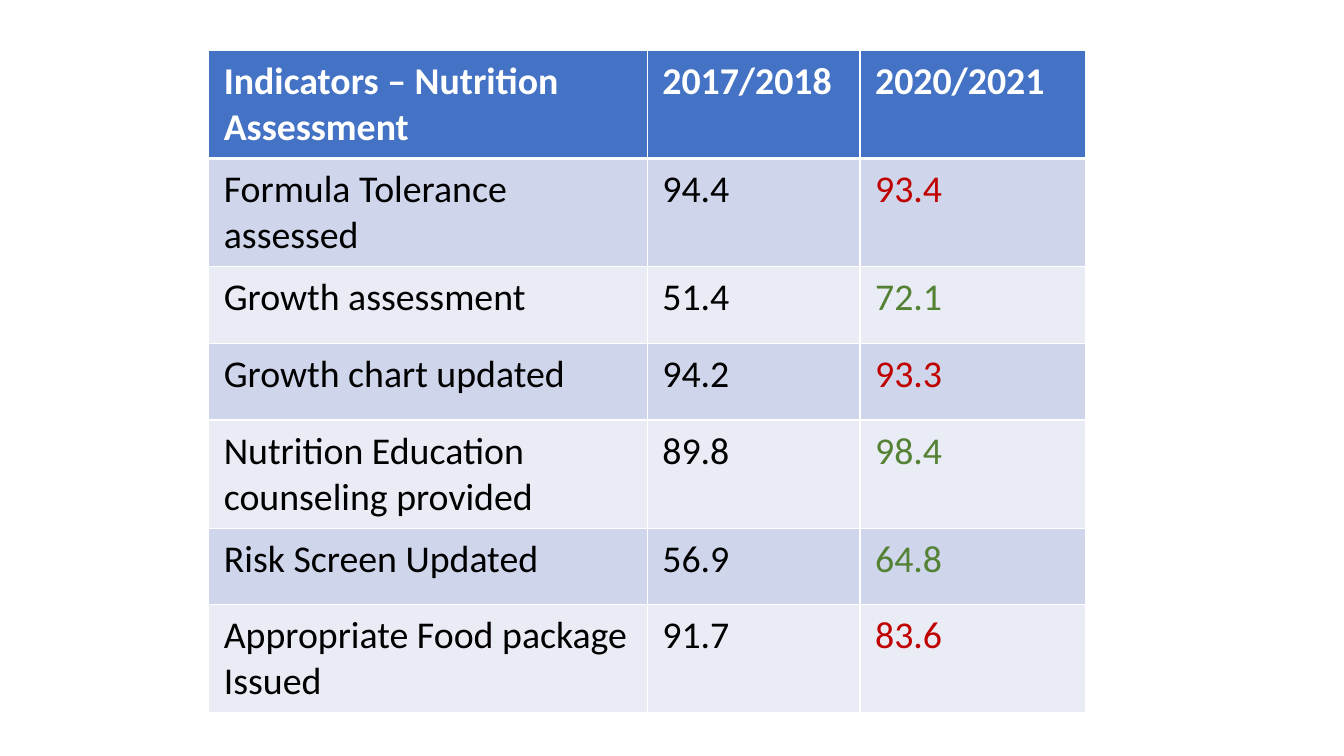
from lxml import etree
from pptx import Presentation
from pptx.dml.color import RGBColor
from pptx.oxml.ns import qn
from pptx.util import Inches, Pt

HEADINGS = ("Indicators – Nutrition Assessment", "2017/2018", "2020/2021")
INDICATORS = [
    ("Formula Tolerance assessed", 94.4, 93.4),
    ("Growth assessment", 51.4, 72.1),
    ("Growth chart updated", 94.2, 93.3),
    ("Nutrition Education counseling provided", 89.8, 98.4),
    ("Risk Screen Updated", 56.9, 64.8),
    ("Appropriate Food package Issued", 91.7, 83.6),
]
COLUMN_WIDTHS = (4.35, 2.11, 2.24)
ROW_HEIGHT = 0.76
LEFT, TOP = 2.07, 0.5
WHITE, BLACK, HEADER_BLUE = "FFFFFF", "000000", "4472C4"
BANDS = ("CFD5EA", "E9EBF5")
BETTER, WORSE = "548235", "C00000"


def color(hex_code):
    return RGBColor.from_string(hex_code)


def add_borders(cell, top, bottom):
    """Draw white cell borders; top and bottom widths are in points."""
    properties = cell._tc.get_or_add_tcPr()
    for side, width in (("L", 1), ("R", 1), ("T", top), ("B", bottom)):
        line = etree.SubElement(properties, qn(f"a:ln{side}"), w=str(Pt(width)))
        fill = etree.SubElement(line, qn("a:solidFill"))
        etree.SubElement(fill, qn("a:srgbClr"), val=WHITE)


def fill_cell(cell, text, fill, text_color, row):
    add_borders(cell, top=3 if row == 1 else 1, bottom=3 if row == 0 else 1)
    cell.fill.solid()
    cell.fill.fore_color.rgb = color(fill)
    cell.margin_left = cell.margin_right = Inches(0.15)
    cell.margin_top = cell.margin_bottom = Inches(0.08)
    cell.text_frame.text = text
    font = cell.text_frame.paragraphs[0].runs[0].font
    font.name = "Calibri"
    font.size = Pt(27)
    font.bold = row == 0
    font.color.rgb = color(text_color)


def main():
    deck = Presentation()
    deck.slide_width, deck.slide_height = Inches(13.33), Inches(7.5)
    slide = deck.slides.add_slide(deck.slide_layouts[6])

    row_count = len(INDICATORS) + 1
    table = slide.shapes.add_table(
        row_count, len(HEADINGS), Inches(LEFT), Inches(TOP),
        Inches(sum(COLUMN_WIDTHS)), Inches(ROW_HEIGHT * row_count)).table
    for column, width in zip(table.columns, COLUMN_WIDTHS):
        column.width = Inches(width)
    for table_row in table.rows:
        table_row.height = Inches(ROW_HEIGHT)

    for column, heading in enumerate(HEADINGS):
        fill_cell(table.cell(0, column), heading, HEADER_BLUE, WHITE, 0)
    for row, (indicator, before, after) in enumerate(INDICATORS, start=1):
        band = BANDS[(row - 1) % 2]
        trend = BETTER if after > before else WORSE
        entries = ((indicator, BLACK), (str(before), BLACK), (str(after), trend))
        for column, (text, text_color) in enumerate(entries):
            fill_cell(table.cell(row, column), text, band, text_color, row)

    deck.save("out.pptx")


if __name__ == "__main__":
    main()
